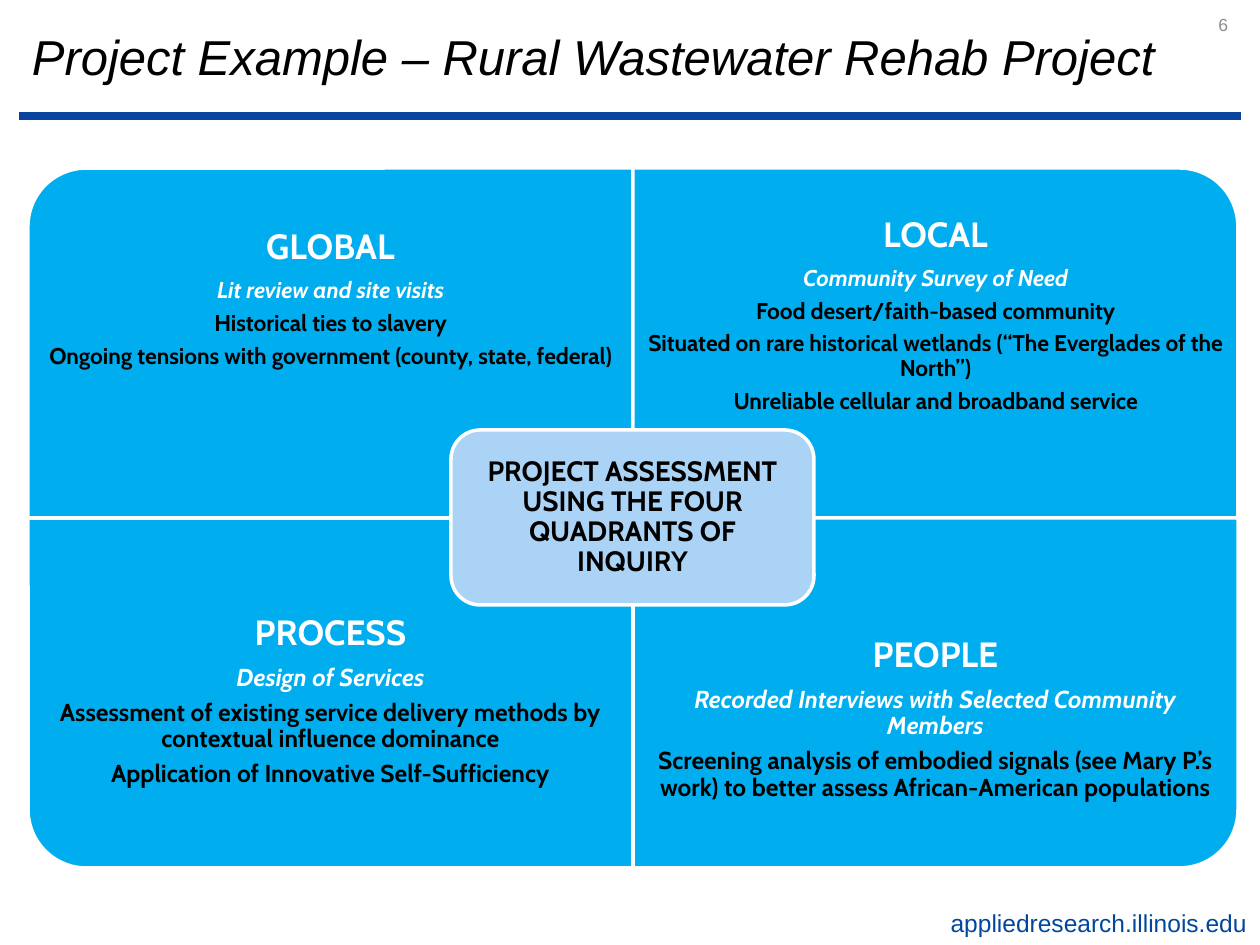
from lxml import etree
from pptx import Presentation
from pptx.dml.color import RGBColor
from pptx.enum.shapes import MSO_CONNECTOR, MSO_SHAPE
from pptx.enum.text import MSO_ANCHOR, PP_ALIGN
from pptx.oxml.ns import qn
from pptx.util import Pt

EMU_PER_PX = 914400 / 126
STRAIGHT = MSO_CONNECTOR.STRAIGHT
QUADRANT, HUB = MSO_SHAPE.ROUND_1_RECTANGLE, MSO_SHAPE.ROUNDED_RECTANGLE
TOP, MIDDLE = MSO_ANCHOR.TOP, MSO_ANCHOR.MIDDLE
LEFT, CENTER, RIGHT = PP_ALIGN.LEFT, PP_ALIGN.CENTER, PP_ALIGN.RIGHT
GRID_LEFT, GRID_TOP, CELL_WIDTH, CELL_HEIGHT = 28, 168, 605, 350
TEXT_HEIGHT = 262
WHITE, BLACK, CYAN = "FFFFFF", "000000", "00AEEF"

# column, row, rotation, (top, side, bottom) insets, body size, heading, method, findings
QUADRANTS = [
    (0, 0, 270, (20, 20, 20), 13, "GLOBAL", "Lit review and site visits",
     ["Historical ties to slavery",
      "Ongoing tensions with government (county, state, federal)"]),
    (1, 0, 0, (46, 13, 13), 13, "LOCAL", "Community Survey of Need",
     ["Food desert/faith-based community",
      "Situated on rare historical wetlands (“The Everglades of the North”)",
      "Unreliable cellular and broadband service"]),
    (0, 1, 180, (20, 20, 91), 14, "PROCESS", "Design of Services",
     ["Assessment of existing service delivery methods by contextual influence dominance",
      "Application of Innovative Self-Sufficiency"]),
    (1, 1, 90, (20, 20, 55), 14, "PEOPLE",
     "Recorded Interviews with Selected Community Members",
     ["Screening analysis of embodied signals (see Mary P.’s work) "
      "to better assess African-American populations"]),
]


def px(length):
    """Turn pixels into EMU."""
    return round(length * EMU_PER_PX)


def color(value):
    """Turn a hex string into a colour."""
    return RGBColor.from_string(value)


def set_frame(frame, anchor, insets):
    """Set wrapping, anchor and the top, side and bottom insets."""
    top, side, bottom = insets
    frame.word_wrap = True
    frame.vertical_anchor = anchor
    frame.margin_top, frame.margin_bottom = px(top), px(bottom)
    frame.margin_left = frame.margin_right = px(side)


def add_run(paragraph, text, size, hue, font="Arial", bold=False, italic=False):
    """Add one formatted run."""
    run = paragraph.add_run()
    run.text = text
    run.font.name, run.font.size = font, Pt(size)
    run.font.bold, run.font.italic = bold, italic
    run.font.color.rgb = color(hue)


def add_diagram_line(paragraph, text, size, hue, italic=False):
    """Fill a centred diagram paragraph with bold text."""
    paragraph.alignment = CENTER
    paragraph.line_spacing = 0.9
    paragraph.space_after = Pt(size * 0.35)
    add_run(paragraph, text, size, hue, "Cabin", True, italic)


def add_label(slide, box, text, size, hue, align, anchor=MIDDLE, italic=False):
    """Add a one-line text box."""
    frame = slide.shapes.add_textbox(*map(px, box)).text_frame
    set_frame(frame, anchor, (6, 13, 6))
    frame.paragraphs[0].alignment = align
    add_run(frame.paragraphs[0], text, size, hue, italic=italic)


def add_panel(slide, kind, box, fill):
    """Add a filled shape with a white outline."""
    panel = slide.shapes.add_shape(kind, *map(px, box))
    panel.shadow.inherit = False
    panel.fill.solid()
    panel.fill.fore_color.rgb = color(fill)
    panel.line.color.rgb = color(WHITE)
    panel.line.width = Pt(2)
    return panel


def add_rule(slide, start_x, end_x, y):
    """Add the horizontal rule under the title."""
    rule = slide.shapes.add_connector(STRAIGHT, px(start_x), px(y), px(end_x), px(y))
    rule.line.color.rgb = color("08449B")
    rule.line.width = Pt(4.5)
    etree.SubElement(rule._element.spPr, qn("a:effectLst"))


def add_quadrant(slide, column, row, rotation, insets, size, heading, method, findings):
    """Add one quadrant, its rounded corner outward, and its text."""
    left = GRID_LEFT + column * CELL_WIDTH
    top = GRID_TOP + row * CELL_HEIGHT
    width, height = CELL_WIDTH, CELL_HEIGHT
    if rotation % 180:
        width, height = height, width
    box = (left + (CELL_WIDTH - width) / 2, top + (CELL_HEIGHT - height) / 2, width, height)
    add_panel(slide, QUADRANT, box, CYAN).rotation = rotation

    text_top = top + row * (CELL_HEIGHT - TEXT_HEIGHT)
    text_box = (left, text_top, CELL_WIDTH, TEXT_HEIGHT)
    frame = slide.shapes.add_textbox(*map(px, text_box)).text_frame
    set_frame(frame, MIDDLE, insets)
    add_diagram_line(frame.paragraphs[0], heading, 20, WHITE)
    add_diagram_line(frame.add_paragraph(), method, size, WHITE, italic=True)
    for finding in findings:
        add_diagram_line(frame.add_paragraph(), finding, size, BLACK)


def add_hub(slide):
    """Add the central panel over the meeting point of the quadrants."""
    hub = add_panel(slide, HUB, (451, 430, 363, 175), "ABD3F6")
    set_frame(hub.text_frame, MIDDLE, (18, 18, 18))
    add_diagram_line(hub.text_frame.paragraphs[0],
                     "PROJECT ASSESSMENT USING THE FOUR QUADRANTS OF INQUIRY", 16, BLACK)


def main():
    """Build and save the slide."""
    deck = Presentation()
    deck.slide_width, deck.slide_height = px(1260), px(945)
    slide = deck.slides.add_slide(deck.slide_layouts[6])
    add_rule(slide, 19, 1241, 116)
    add_label(slide, (856, 902, 404, 43), "appliedresearch.illinois.edu",
              14, "00479D", RIGHT, TOP)
    add_label(slide, (1038, 0, 203, 50), "6", 10, "8C8C8C", RIGHT)
    add_label(slide, (19, 0, 1223, 111), "Project Example – Rural Wastewater Rehab Project",
              28, BLACK, LEFT, italic=True)
    for quadrant in QUADRANTS:
        add_quadrant(slide, *quadrant)
    add_hub(slide)
    deck.save("out.pptx")


if __name__ == "__main__":
    main()
